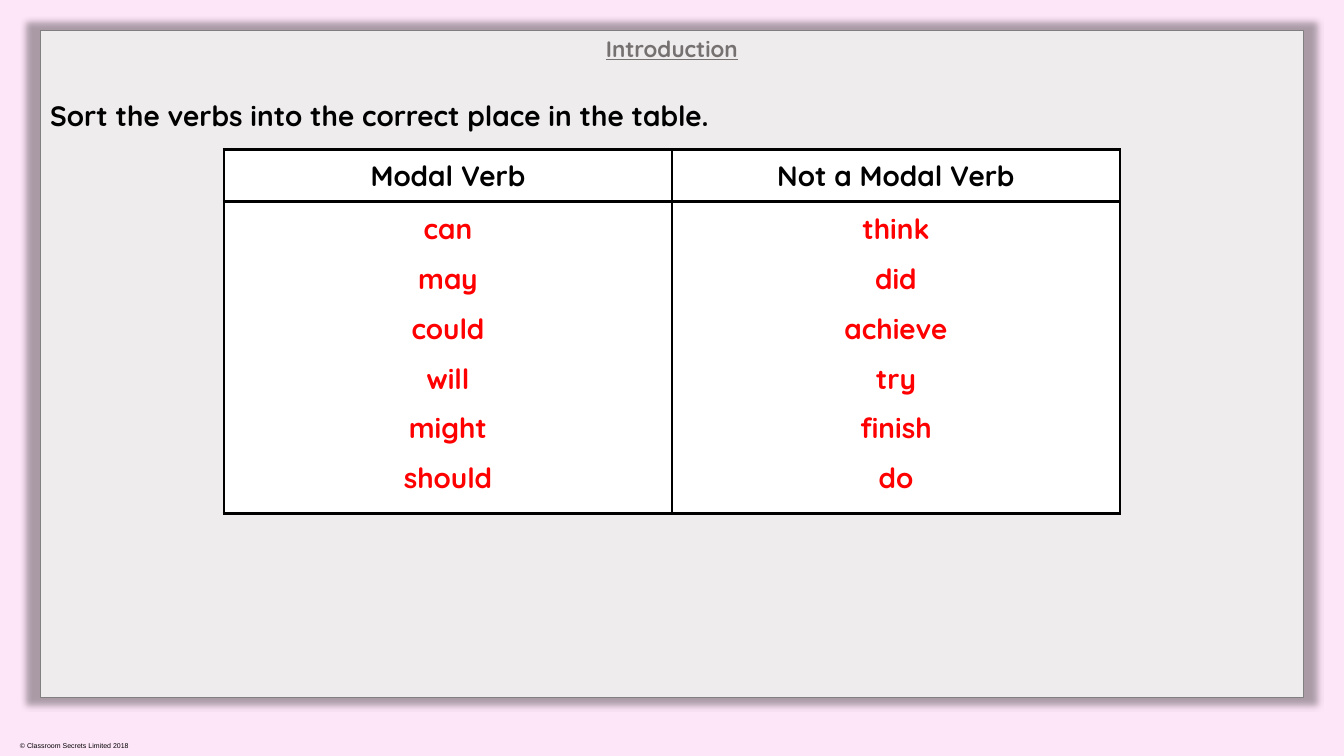
from pptx import Presentation
from pptx.dml.color import RGBColor
from pptx.enum.shapes import MSO_SHAPE as Shape
from pptx.enum.text import MSO_ANCHOR as Anchor, PP_ALIGN as Align
from pptx.oxml import parse_xml
from pptx.oxml.ns import nsdecls, qn
from pptx.util import Pt

PINK = RGBColor(0xFE, 0xE6, 0xF9)
WHITE = RGBColor(0xFF, 0xFF, 0xFF)
BLACK = RGBColor(0, 0, 0)
GREY = RGBColor(0x80, 0x80, 0x80)
TITLE_GREY = RGBColor(0x76, 0x71, 0x71)
RED = RGBColor(0xFF, 0, 0)

PANEL_LEFT, PANEL_TOP, PANEL_WIDTH, PANEL_HEIGHT = 28.8, 21.6, 902.2, 476.6
TABLE_LEFT, TABLE_TOP, COLUMN_WIDTH = 160, 107, 320
ROW_HEIGHTS = (37, 223)
WORD_TOP, WORD_STEP, WORD_WIDTH, WORD_HEIGHT = 147.6, 35.6, 177, 31.5

VERBS = {
    "Modal Verb": ("can", "may", "could", "will", "might", "should"),
    "Not a Modal Verb": ("think", "did", "achieve", "try", "finish", "do"),
}


def write(frame, text, size, color, align=Align.CENTER, name="Quicksand", bold=True):
    frame.word_wrap = True
    frame.text = text
    para = frame.paragraphs[0]
    para.alignment = align
    font = para.font
    font.name, font.size, font.bold = name, Pt(size), bold
    font.color.rgb = color
    return font


def add_text(slide, left, top, width, height, text, size, color, **style):
    box = slide.shapes.add_textbox(Pt(left), Pt(top), Pt(width), Pt(height))
    write(box.text_frame, text, size, color, **style)


def add_panel(slide):
    panel = slide.shapes.add_shape(
        Shape.RECTANGLE, Pt(PANEL_LEFT), Pt(PANEL_TOP), Pt(PANEL_WIDTH), Pt(PANEL_HEIGHT))
    panel.fill.solid()
    panel.fill.fore_color.rgb = WHITE
    panel.line.color.rgb = GREY
    panel.line.width = Pt(1)
    properties = panel._element.spPr
    fill_color = properties.find(qn("a:solidFill"))[0]
    fill_color.append(parse_xml(f'<a:alpha {nsdecls("a")} val="82000"/>'))
    properties.append(parse_xml(
        f'<a:effectLst {nsdecls("a")}><a:outerShdw blurRad="{Pt(5)}" sx="102000" sy="102000" '
        'algn="ctr" rotWithShape="0"><a:srgbClr val="000000"><a:alpha val="40000"/>'
        '</a:srgbClr></a:outerShdw></a:effectLst>'))


def add_title(slide, text):
    title = slide.shapes.title
    title.left, title.top = Pt(PANEL_LEFT), Pt(PANEL_TOP)
    title.width, title.height = Pt(PANEL_WIDTH), Pt(27.2)
    title.text_frame.vertical_anchor = Anchor.TOP
    font = write(title.text_frame, text, 16, TITLE_GREY)
    font.underline = True
    title.text_frame.paragraphs[0].line_spacing = 1.0
    slide.shapes._spTree.append(title._element)


def set_borders(cell):
    properties = cell._tc.get_or_add_tcPr()
    for index, side in enumerate(("lnL", "lnR", "lnT", "lnB")):
        properties.insert(index, parse_xml(
            f'<a:{side} {nsdecls("a")} w="{Pt(2.25)}"><a:solidFill>'
            f'<a:srgbClr val="{BLACK}"/></a:solidFill></a:{side}>'))


def add_verb_table(slide):
    table = slide.shapes.add_table(
        len(ROW_HEIGHTS), len(VERBS), Pt(TABLE_LEFT), Pt(TABLE_TOP),
        Pt(COLUMN_WIDTH * len(VERBS)), Pt(sum(ROW_HEIGHTS))).table
    table.first_row = table.horz_banding = False
    for column in table.columns:
        column.width = Pt(COLUMN_WIDTH)
    for row, height in zip(table.rows, ROW_HEIGHTS):
        row.height = Pt(height)
    for cell in table.iter_cells():
        cell.fill.solid()
        cell.fill.fore_color.rgb = WHITE
        cell.vertical_anchor = Anchor.MIDDLE
        set_borders(cell)
    for index, heading in enumerate(VERBS):
        write(table.cell(0, index).text_frame, heading, 20, BLACK)


def add_words(slide):
    for column, words in enumerate(VERBS.values()):
        left = TABLE_LEFT + (column + 0.5) * COLUMN_WIDTH - WORD_WIDTH / 2
        for row, word in enumerate(words):
            add_text(slide, left, WORD_TOP + row * WORD_STEP,
                     WORD_WIDTH, WORD_HEIGHT, word, 20, RED)


def main():
    deck = Presentation()
    deck.slide_width, deck.slide_height = Pt(960), Pt(540)
    slide = deck.slides.add_slide(deck.slide_layouts[5])
    slide.background.fill.solid()
    slide.background.fill.fore_color.rgb = PINK
    add_text(slide, 7.2, 526.3, 124.6, 13.7, "© Classroom Secrets Limited 2018", 5, BLACK,
             align=Align.LEFT, name="Arial", bold=False)
    add_panel(slide)
    add_title(slide, "Introduction")
    add_text(slide, PANEL_LEFT, 66.6, PANEL_WIDTH, 32.2,
             "Sort the verbs into the correct place in the table.", 20, BLACK, align=Align.LEFT)
    add_verb_table(slide)
    add_words(slide)
    deck.save("out.pptx")


if __name__ == "__main__":
    main()
